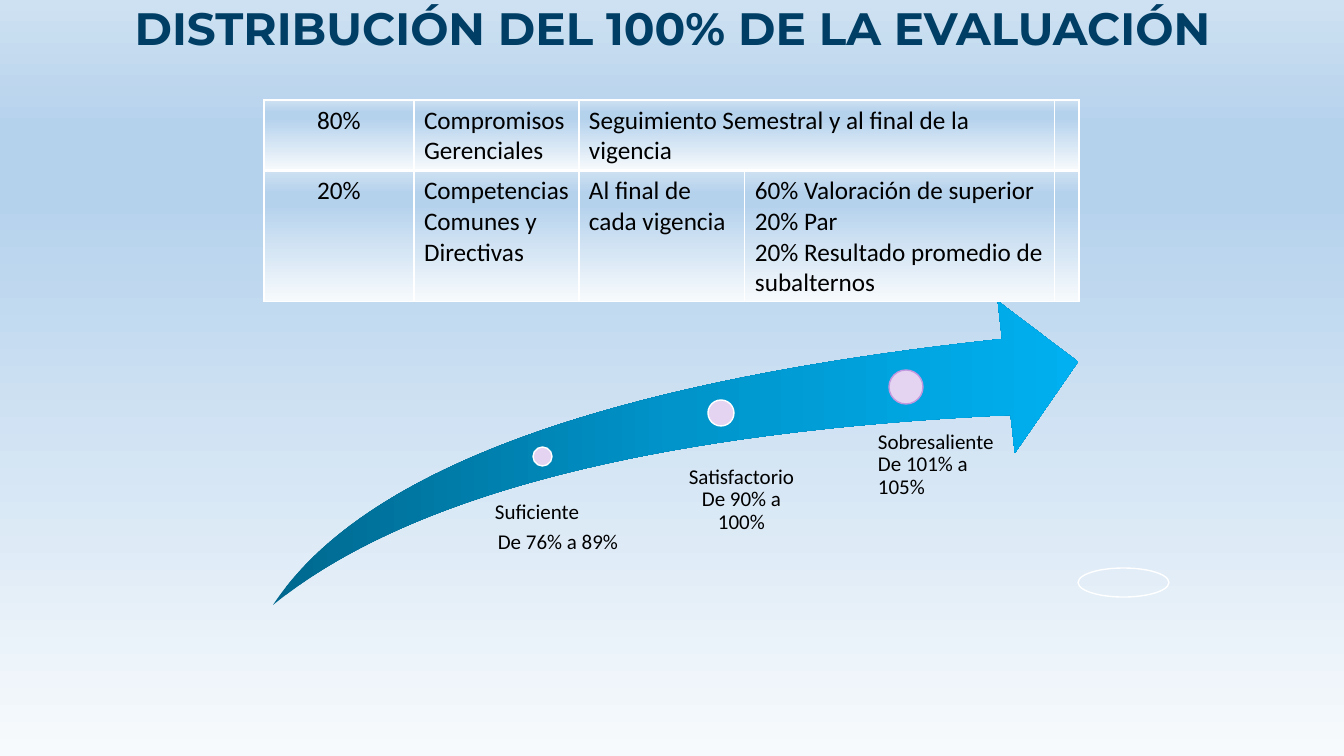
from lxml.etree import SubElement
from pptx import Presentation
from pptx.dml.color import RGBColor
from pptx.enum.shapes import MSO_SHAPE as Shape
from pptx.enum.text import MSO_ANCHOR as Anchor, PP_ALIGN as Align
from pptx.oxml.ns import qn
from pptx.util import Emu, Pt

SKY = [(0, "F7FAFD"), (74, "B5D2EC"), (83, "B5D2EC"), (100, "CEE1F2")]
OCEAN = [(0, "00688E"), (50, "0094CA"), (100, "00B0F0")]
LILAC, WHITE = "E4D3F1", "FFFFFF"


def px(length):
    """Turn whole pixels into EMU."""
    return Emu(round(length * 914400 / 100.8))


def rgb(color):
    """Turn a hex string into a colour."""
    return RGBColor.from_string(color)


class EvaluationSlide:
    """Holds the text style and the current slide."""

    font, color = "Calibri", "000000"

    def __init__(self, deck):
        self.slide = deck.slides.add_slide(deck.slide_layouts[6])
        self.gradient(self.slide.background.fill, self.slide.element, SKY, 90)

    def gradient(self, fill, owner, stops, angle):
        """Fill with colour stops along an angle."""
        fill.gradient()
        fill.gradient_angle = angle
        stop_list = next(owner.iter(qn("a:gsLst")))
        for stop in list(stop_list):
            stop_list.remove(stop)
        for position, color in stops:
            stop = SubElement(stop_list, qn("a:gs"), pos=str(position * 1000))
            SubElement(stop, qn("a:srgbClr"), val=color)

    def add_lines(self, frame, lines, size, font=None, color=None, bold=False, spacing=None, after=0):
        """Put (text, alignment) lines into a text frame."""
        for index, (text, align) in enumerate(lines):
            paragraph = frame.add_paragraph() if index else frame.paragraphs[0]
            paragraph.alignment = align
            paragraph.line_spacing = spacing
            paragraph.space_after = Pt(after)
            run = paragraph.add_run()
            run.text = text
            run.font.name, run.font.size, run.font.bold = font or self.font, Pt(size), bold
            run.font.color.rgb = rgb(color or self.color)

    def text(self, box, lines, size, inset=0, anchor=Anchor.TOP, **style):
        """Add a wrapping text box."""
        frame = self.slide.shapes.add_textbox(*map(px, box)).text_frame
        frame.word_wrap = True
        frame.vertical_anchor = anchor
        frame.margin_left = px(inset)
        frame.margin_top = frame.margin_right = frame.margin_bottom = 0
        self.add_lines(frame, lines, size, spacing=0.9, **style)

    def ellipse(self, box, fill=None, line=WHITE):
        """Add an outlined ellipse, hollow unless filled."""
        oval = self.slide.shapes.add_shape(Shape.OVAL, *map(px, box))
        oval.shadow.inherit = False
        if fill:
            oval.fill.solid()
            oval.fill.fore_color.rgb = rgb(fill)
        else:
            oval.fill.background()
        oval.line.color.rgb = rgb(line)
        oval.line.width = Pt(1)

    def swoosh(self, box):
        """Add the rising arrow."""
        arrow = self.slide.shapes.add_shape(Shape.SWOOSH_ARROW, *map(px, box))
        arrow.shadow.inherit = False
        arrow.adjustments[0] = arrow.adjustments[1] = 0.25
        arrow.line.fill.background()
        self.gradient(arrow.fill, arrow.element, OCEAN, 0)

    def border(self, cell_props, side, width):
        """Add one white cell border."""
        line = SubElement(cell_props, qn(f"a:{side}"), w=str(Pt(width)))
        SubElement(SubElement(line, qn("a:solidFill")), qn("a:srgbClr"), val=WHITE)

    def table(self, box, widths, heights, rows):
        """Add the weighting table, with a thick rule below its first row."""
        frame = self.slide.shapes.add_table(len(rows), len(widths), *map(px, box))
        table = frame.table
        table.first_row = table.horz_banding = False
        for column, width in zip(table.columns, widths):
            column.width = px(width)
        for row, height in zip(table.rows, heights):
            row.height = px(height)
        for r, row in enumerate(rows):
            for c, lines in enumerate(row):
                cell = table.cell(r, c)
                cell_props = cell._tc.get_or_add_tcPr()
                rules = {"lnL": 1, "lnR": 1, "lnT": 3 if r else 1, "lnB": 1 if r else 3}
                for side, width in rules.items():
                    self.border(cell_props, side, width)
                self.gradient(cell.fill, cell_props, SKY, 90)
                self.add_lines(cell.text_frame, lines, 18)
        table.cell(0, 2).merge(table.cell(0, 3))


def main():
    """Build and save the slide."""
    deck = Presentation()
    deck.slide_width, deck.slide_height = px(1344), px(756)
    page = EvaluationSlide(deck)
    left, center = Align.LEFT, Align.CENTER

    page.text((93, 0, 1159, 62), [("DISTRIBUCIÓN DEL 100% DE LA EVALUACIÓN", center)], 32.4,
              anchor=Anchor.MIDDLE, font="Montserrat", color="003E65", bold=True)
    page.swoosh((273, 301, 805, 304))
    page.ellipse((1078, 568, 91, 29))

    levels = [
        ((533, 447, 19, 19), WHITE, (485, 501, 136, 81), 10,
         [("Suficiente", left), ("De 76% a 89%", center)]),
        ((708, 400, 26, 26), WHITE, (672, 466, 125, 93), 14,
         [("Satisfactorio De 90% a 100%", center)]),
        ((889, 370, 34, 34), "C198E0", (860, 431, 140, 83), 18,
         [("Sobresaliente De 101% a 105%", left)]),
    ]
    for dot, outline, label, inset, lines in levels:
        page.ellipse(dot, LILAC, outline)
        page.text(label, lines, 15, inset, after=5.25)

    weights = [
        [[("80%", center)], [("Compromisos Gerenciales", left)],
         [("Seguimiento Semestral y al final de la vigencia", left)], [], []],
        [[("20%", center)], [("Competencias Comunes y Directivas", left)],
         [("Al final de cada vigencia", left)],
         [("60% Valoración de superior", left), ("20% Par", left),
          ("20% Resultado promedio de subalternos", left)], []],
    ]
    page.table((264, 100, 814, 202), [150, 165, 166, 310, 23], [70, 129], weights)
    deck.save("out.pptx")


if __name__ == "__main__":
    main()
